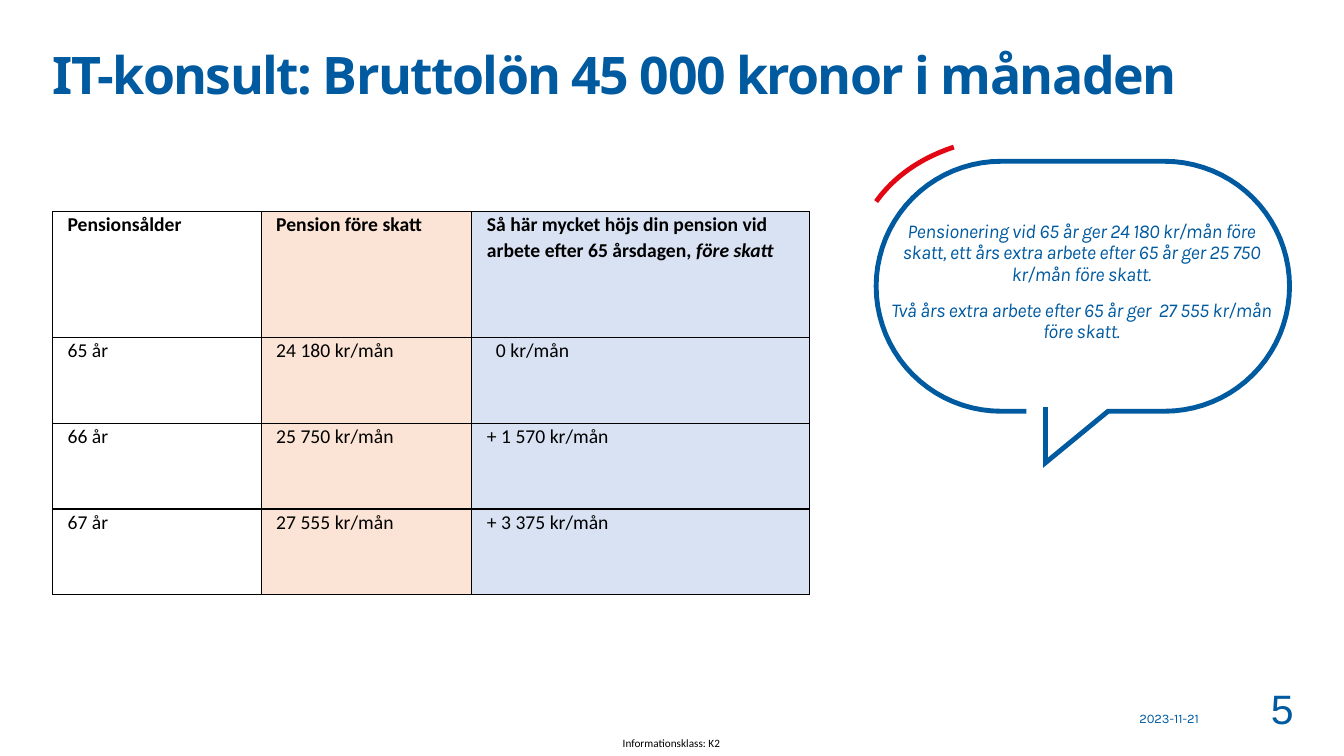
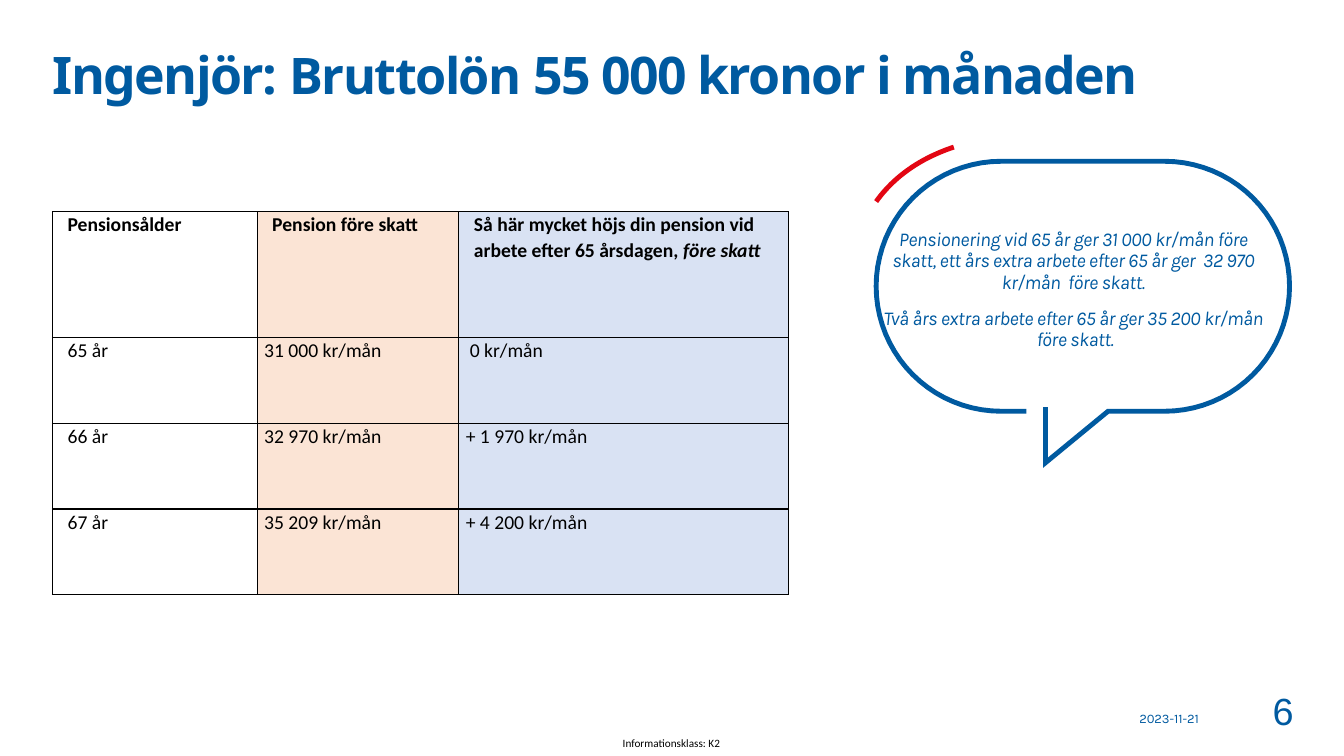
from dataclasses import dataclass
from math import cos, pi, sin
from typing import NamedTuple

from lxml.etree import SubElement
from pptx import Presentation
from pptx.dml.color import RGBColor as Rgb
from pptx.enum.text import MSO_ANCHOR as Anchor, MSO_AUTO_SIZE as Fit, PP_ALIGN as Align
from pptx.oxml.ns import qn
from pptx.util import Pt

PX = 9144  # EMU per px, 100 px to the inch

HUES = {
    "blue": "005AA0",
    "red": "E30613",
    "black": "000000",
    "peach": "FBE4D5",
    "ice": "D9E2F3",
}


class Box(NamedTuple):
    left: int
    top: int
    width: int
    height: int


class Run(NamedTuple):
    text: str
    size: float | None = None
    italic: bool | None = None


@dataclass(frozen=True)
class Look:
    font: str
    size: float
    hue: str = "blue"
    bold: bool = False
    italic: bool = False
    align: Align = Align.LEFT
    line: float = 1.0
    before: float = 0
    after: float = 0
    track: int = 0  # letter spacing, hundredths of a point


@dataclass(frozen=True)
class Page:
    number: str
    size: float  # size of the page number
    title: list[Run]
    quote: list[str]
    place: Box  # place of the quote
    cols: list[int]
    pad: int  # side margin of the amounts
    shift: int  # extra indent of the zero amount
    rows: list[list[str]]


# Shared styles and places
TITLE = Look("Noto Sans", 37, bold=True, line=0.85, after=6, track=-110)
QUOTE = Look("Karla", 14, italic=True, align=Align.CENTER, line=0.9,
             before=10.7, track=-30)
DATE = Look("Karla", 9.3, after=6)
CLASS = Look("Calibri", 8, "black", align=Align.CENTER)
HEAD = Look("Calibri", 14, "black", bold=True, line=1.07, after=8)
CELL = Look("Calibri", 14, "black", line=1.07, after=8)

TITLE_BOX = Box(52, 52, 1229, 84)
DATE_BOX = Box(1130, 688, 68, 32)
PAGE_BOX = Box(1198, 685, 85, 42)
CLASS_BOX = Box(604, 725, 124, 25)
TABLE_AT = (52, 210)
HEIGHTS = [125, 85, 85, 85]
FILLS = [None, "peach", "ice"]
PAD = 15
HEADS = [
    [Run("Pensionsålder")],
    [Run("Pension före skatt")],
    [Run("Så här mycket höjs din pension vid arbete efter 65 årsdagen, "),
     Run("före skatt", italic=True)],
]

PAGES = [
    Page(
        "5", 29.3,
        [Run("IT-konsult: Bruttolön 45 000 kronor i månaden")],
        ["Pensionering vid 65 år ger 24 180 kr/mån före skatt, ett års extra "
         "arbete efter 65 år ger 25 750 kr/mån före skatt.",
         "Två års extra arbete efter 65 år ger  27 555 kr/mån före skatt."],
        Box(864, 156, 417, 248),
        [207, 209, 335], PAD, 9,
        [["65 år", "24 180 kr/mån", "0 kr/mån"],
         ["66 år", "25 750 kr/mån", "+ 1 570 kr/mån"],
         ["67 år", "27 555 kr/mån", "+ 3 375 kr/mån"]],
    ),
    Page(
        "6", 27,
        [Run("Ingenjör: "), Run("Bruttolön ", 36), Run("55 000 kronor i månaden")],
        ["Pensionering vid 65 år ger 31 000 kr/mån före skatt, ett års extra "
         "arbete efter 65 år ger  32 970 kr/mån  före skatt.",
         "Två års extra arbete efter 65 år ger 35 200 kr/mån  före skatt."],
        Box(856, 164, 417, 248),
        [203, 200, 327], 7, 4,
        [["65 år", "31 000 kr/mån", "0 kr/mån"],
         ["66 år", "32 970 kr/mån", "+ 1 970 kr/mån"],
         ["67 år", "35 209 kr/mån", "+ 4 200 kr/mån"]],
    ),
]


def color(name: str) -> Rgb:
    return Rgb.from_string(HUES[name])


def style(para, look: Look) -> None:
    """Format one paragraph, without a bullet."""
    props = para._p.get_or_add_pPr()
    props.set("marL", "0")
    props.set("indent", "0")
    SubElement(props, qn("a:buNone"))
    para.alignment = look.align
    para.line_spacing = look.line
    para.space_before = Pt(look.before)
    para.space_after = Pt(look.after)
    font = para.font
    font.name, font.size = look.font, Pt(look.size)
    font.bold, font.italic = look.bold, look.italic
    font.color.rgb = color(look.hue)
    if look.track:
        props.find(qn("a:defRPr")).set("spc", str(look.track))


def write(frame, paras: list[list[Run]], look: Look) -> None:
    """Fill a text frame with paragraphs of runs."""
    for i, runs in enumerate(paras):
        para = frame.add_paragraph() if i else frame.paragraphs[0]
        style(para, look)
        if i == 0:
            para.space_before = Pt(0)
        for item in runs:
            run = para.add_run()
            run.text = item.text
            if item.size:
                run.font.size = Pt(item.size)
            if item.italic:
                run.font.italic = True


def place(shape, box: Box, anchor: Anchor, pad: int = 0):
    """Move a text shape and set up its frame."""
    shape.left, shape.top, shape.width, shape.height = (n * PX for n in box)
    frame = shape.text_frame
    frame.auto_size, frame.word_wrap = Fit.NONE, True
    frame.vertical_anchor = anchor
    frame.margin_left = frame.margin_right = pad * PX
    frame.margin_top = frame.margin_bottom = pad * PX
    return frame


def label(slide, text: str, box: Box, look: Look, anchor: Anchor) -> None:
    shape = slide.shapes.add_textbox(0, 0, 0, 0)
    write(place(shape, box, anchor), [[Run(text)]], look)


def stroke(slide, points: list[tuple[float, float]], hue: str) -> None:
    """Draw an open outline through points."""
    first, *rest = [(x * PX, y * PX) for x, y in points]
    pen = slide.shapes.build_freeform(*first, scale=1.0)
    pen.add_line_segments(rest, close=False)
    shape = pen.convert_to_shape()
    shape.shadow.inherit = False
    shape.fill.background()
    shape.line.color.rgb = color(hue)
    shape.line.width = Pt(3.5)
    SubElement(shape.line._get_or_add_ln(), qn("a:miter"), lim="800000")


def bubble(slide) -> None:
    """Speech bubble with a red accent at its corner."""
    steps, mid, rad = 40, 284, 124

    def arc(x: int, start: float) -> list[tuple[float, float]]:
        turns = [start - pi * i / steps for i in range(steps + 1)]
        return [(x + rad * cos(t), mid + rad * sin(t)) for t in turns]

    tail = [(1037, 404), (1037, 459), (1099, 408)]
    stroke(slide, [*tail, *arc(1155, pi / 2), *arc(993, -pi / 2), (1018, 408)],
           "blue")

    ctrl = [(946, 146), (913, 157), (887, 175), (869, 200)]
    curve = []
    for i in range(steps + 1):
        t = i / steps
        parts = [(1 - t) ** 3, 3 * t * (1 - t) ** 2, 3 * t * t * (1 - t), t ** 3]
        curve.append((sum(w * p[0] for w, p in zip(parts, ctrl)),
                      sum(w * p[1] for w, p in zip(parts, ctrl))))
    stroke(slide, curve, "red")


def border(cell) -> None:
    props = cell._tc.get_or_add_tcPr()
    for side in ("lnL", "lnR", "lnT", "lnB"):
        line = SubElement(props, qn(f"a:{side}"), w=str(Pt(1)))
        fill = SubElement(line, qn("a:solidFill"))
        SubElement(fill, qn("a:srgbClr"), val=HUES["black"])


def grid(slide, page: Page) -> None:
    """Pension table."""
    body = [[[Run(text)] for text in row] for row in page.rows]
    size = (sum(page.cols), sum(HEIGHTS))
    spot = [n * PX for n in (*TABLE_AT, *size)]
    table = slide.shapes.add_table(len(HEIGHTS), len(page.cols), *spot).table
    table.first_row = table.horz_banding = False
    for col, width in zip(table.columns, page.cols):
        col.width = width * PX
    for r, (height, row) in enumerate(zip(HEIGHTS, [HEADS, *body])):
        table.rows[r].height = height * PX
        for c, runs in enumerate(row):
            cell = table.cell(r, c)
            pad = page.pad if r and c else PAD
            shift = page.shift if (r, c) == (1, 2) else 0
            cell.margin_left, cell.margin_right = (pad + shift) * PX, pad * PX
            cell.margin_top = cell.margin_bottom = 0
            border(cell)
            if FILLS[c]:
                cell.fill.solid()
                cell.fill.fore_color.rgb = color(FILLS[c])
            else:
                cell.fill.background()
            write(cell.text_frame, [runs], CELL if r else HEAD)


def build(deck, page: Page) -> None:
    slide = deck.slides.add_slide(deck.slide_layouts[1])
    # Title and quote
    title, quote = slide.placeholders
    write(place(title, TITLE_BOX, Anchor.TOP), [page.title], TITLE)
    write(place(quote, page.place, Anchor.MIDDLE, 20),
          [[Run(text)] for text in page.quote], QUOTE)
    bubble(slide)
    grid(slide, page)
    # Footer
    label(slide, "Informationsklass: K2", CLASS_BOX, CLASS, Anchor.MIDDLE)
    label(slide, "2023-11-21", DATE_BOX, DATE, Anchor.BOTTOM)
    look = Look("Arial", page.size, align=Align.RIGHT, after=6)
    label(slide, page.number, PAGE_BOX, look, Anchor.BOTTOM)


def main() -> None:
    deck = Presentation()
    deck.slide_width, deck.slide_height = 1333 * PX, 750 * PX
    for page in PAGES:
        build(deck, page)
    deck.save("out.pptx")


if __name__ == "__main__":
    main()
